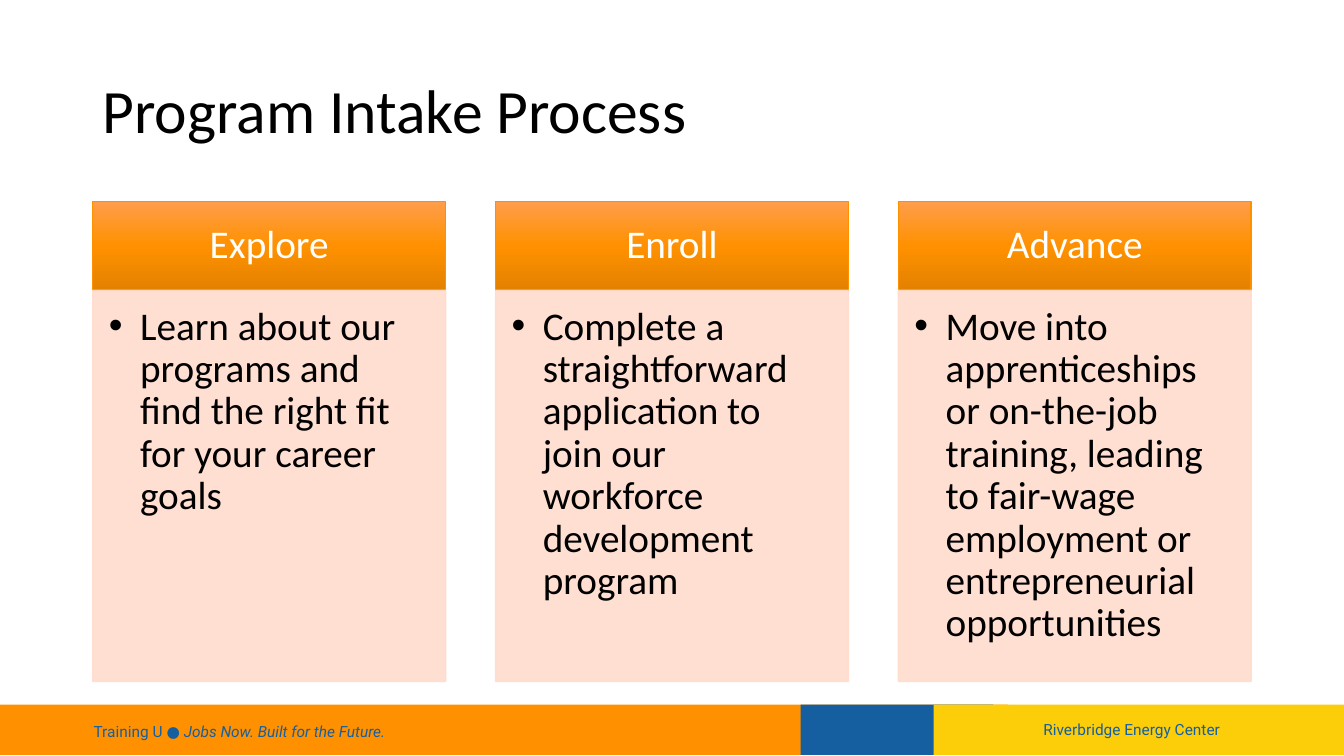
"""Build the program intake process slide."""
from copy import deepcopy
from dataclasses import dataclass

from lxml.etree import SubElement
from pptx import Presentation
from pptx.dml.color import RGBColor
from pptx.enum.shapes import MSO_SHAPE
from pptx.enum.text import MSO_ANCHOR, PP_ALIGN
from pptx.oxml.ns import qn
from pptx.util import Inches, Pt


@dataclass(frozen=True)
class Theme:
    """Colours, fonts and type sizes of the slide."""
    orange: str = "FF9100"
    blue: str = "155FA1"
    yellow: str = "FCCE09"
    peach: str = "FFDCCC"
    white: str = "FFFFFF"
    black: str = "000000"
    header_stops: tuple = ((0, "FF9D4B"), (0.5, "FF9100"), (1, "E38100"))
    card_opacity: int = 90
    body_font: str = "Calibri"
    footer_font: str = "Roboto"
    title_size: int = 44
    body_size: int = 28
    footer_size: int = 11


def write(box, text, *, size, color, font, italic_tail="", align=PP_ALIGN.LEFT,
          anchor=MSO_ANCHOR.MIDDLE, spacing=None, insets=(0.1, 0.05, 0.1, 0.05), bullet=None):
    """Write one formatted paragraph into a box."""
    frame = box.text_frame
    frame.word_wrap = True
    frame.vertical_anchor = anchor
    (frame.margin_left, frame.margin_top,
     frame.margin_right, frame.margin_bottom) = map(Inches, insets)
    para = frame.paragraphs[0]
    para.alignment = align
    para.line_spacing = spacing
    if bullet:
        properties = para._p.get_or_add_pPr()
        properties.set("marL", str(Inches(0.31)))
        properties.set("indent", str(-Inches(0.31)))
        SubElement(properties, qn("a:buFont"), typeface="Arial")
        SubElement(properties, qn("a:buChar"), char=bullet)
    for part, italic in ((text, False), (italic_tail, True)):
        if part:
            span = para.add_run()
            span.text = part
            span.font.size = Pt(size)
            span.font.name = font
            span.font.italic = italic
            span.font.color.rgb = RGBColor.from_string(color)


class Page:
    """Hold the theme and the current slide."""

    def __init__(self, slide, theme):
        """Keep the slide and its theme."""
        self.shapes = slide.shapes
        self.theme = theme

    def block(self, left, top, width, height, color, outline=False):
        """Add a filled rectangle."""
        box = self.shapes.add_shape(MSO_SHAPE.RECTANGLE, *map(Inches, (left, top, width, height)))
        box.shadow.inherit = False
        box.fill.solid()
        box.fill.fore_color.rgb = RGBColor.from_string(color)
        if outline:
            box.line.color.rgb = RGBColor.from_string(color)
            box.line.width = Pt(1)
        else:
            box.line.fill.background()
        return box

    def label(self, left, top, width, height, text, **style):
        """Add a text box."""
        box = self.shapes.add_textbox(*map(Inches, (left, top, width, height)))
        write(box, text, **style)

    def header(self, left, top, width, height, text):
        """Add a gradient heading bar."""
        theme = self.theme
        box = self.block(left, top, width, height, theme.orange, outline=True)
        box.fill.gradient()
        box.fill.gradient_angle = 270
        stops = next(box._element.spPr.iter(qn("a:gsLst")))
        stops.append(deepcopy(stops[0]))
        for stop, (position, color) in zip(box.fill.gradient_stops, theme.header_stops):
            stop.position = position
            stop.color.rgb = RGBColor.from_string(color)
        write(box, text, size=theme.body_size, color=theme.white, font=theme.body_font,
              align=PP_ALIGN.CENTER, spacing=0.9, insets=(0.22, 0.12, 0.22, 0.12))

    def card(self, left, top, width, height, text):
        """Add a translucent card with one bullet."""
        theme = self.theme
        box = self.block(left, top, width, height, theme.peach, outline=True)
        for color in box._element.spPr.iter(qn("a:srgbClr")):
            SubElement(color, qn("a:alpha"), val=str(theme.card_opacity * 1000))
        write(box, text, size=theme.body_size, color=theme.black, font=theme.body_font,
              anchor=MSO_ANCHOR.TOP, spacing=0.9, insets=(0.16, 0.16, 0.22, 0.24), bullet="•")


STEPS = (
    ("Explore", "Learn about our programs and find the right fit for your career goals"),
    ("Enroll", "Complete a straightforward application to join our workforce "
               "development program"),
    ("Advance", "Move into apprenticeships or on-the-job training, leading to fair-wage "
                "employment or entrepreneurial opportunities"),
)


def main():
    """Build and save the deck."""
    deck = Presentation()
    deck.slide_width, deck.slide_height = Inches(13.33), Inches(7.5)
    theme = Theme()
    page = Page(deck.slides.add_slide(deck.slide_layouts[6]), theme)

    for left, width, color in ((0, 10, theme.orange), (7.94, 1.91, theme.blue),
                               (9.26, 4.07, theme.yellow)):
        page.block(left, 6.99, width, 0.5, color)
    footer = dict(size=theme.footer_size, color=theme.blue, font=theme.footer_font)
    page.label(0.83, 7.06, 6.33, 0.4, "Training U ● ",
               italic_tail="Jobs Now. Built for the Future.", **footer)
    page.label(10.25, 7.04, 2.1, 0.4, "Riverbridge Energy Center", **footer)

    page.label(0.92, 0.4, 11.5, 1.45, "Program Intake Process", size=theme.title_size,
               color=theme.black, font=theme.body_font, spacing=0.9)
    for index, (heading, detail) in enumerate(STEPS):
        left = 0.92 + index * 3.995
        page.header(left, 2, 3.5, 0.88, heading)
        page.card(left, 2.88, 3.5, 3.88, detail)
    deck.save("out.pptx")


if __name__ == "__main__":
    main()
